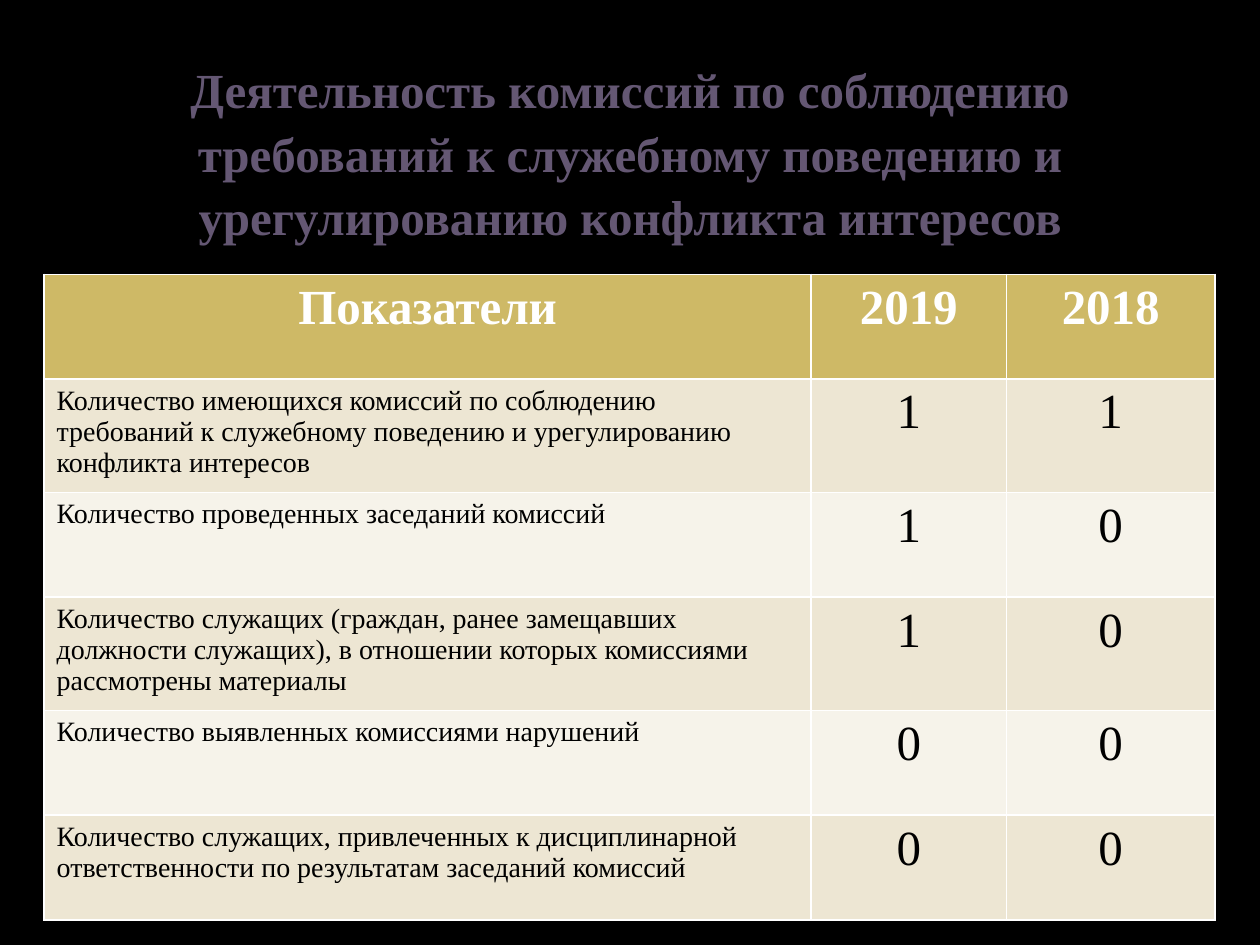
"""Build a slide with a table of commission activity for 2019 and 2018."""
from pptx import Presentation
from pptx.dml.color import RGBColor
from pptx.enum.text import MSO_ANCHOR, PP_ALIGN
from pptx.util import Cm, Pt

TITLE = ("Деятельность комиссий по соблюдению требований к служебному "
         "поведению и урегулированию конфликта интересов")
ROWS = [
    ("Показатели", "2019", "2018"),
    ("Количество имеющихся комиссий по соблюдению требований к служебному "
     "поведению и урегулированию конфликта интересов", "1", "1"),
    ("Количество проведенных заседаний комиссий", "1", "0"),
    ("Количество служащих (граждан, ранее замещавших должности служащих), "
     "в отношении которых комиссиями рассмотрены материалы", "1", "0"),
    ("Количество выявленных комиссиями нарушений", "0", "0"),
    ("Количество служащих, привлеченных к дисциплинарной ответственности "
     "по результатам заседаний комиссий", "0", "0"),
]
COLUMN_WIDTHS = (15.46, 3.94, 4.2)
ROW_HEIGHT = 2.11
FONT = "Times New Roman"
LARGE, SMALL = 28, 16
HEADER_FILL = "CEB966"
BAND_FILLS = ("F6F3EA", "EDE6D3")


def color(value):
    return RGBColor.from_string(value)


def write(frame, text, size, ink, bold, alignment):
    frame.text = text
    para = frame.paragraphs[0]
    para.alignment = alignment
    font = para.runs[0].font
    font.name, font.size, font.bold = FONT, Pt(size), bold
    font.color.rgb = color(ink)
    return para


def add_title(page):
    box = page.shapes.add_textbox(Cm(1.27), Cm(0.94), Cm(22.86), Cm(4.19))
    frame = box.text_frame
    frame.word_wrap = True
    frame.vertical_anchor = MSO_ANCHOR.MIDDLE
    para = write(frame, TITLE, LARGE, "645773", True, PP_ALIGN.CENTER)
    para.line_spacing = 1.08


def add_indicators(page):
    table = page.shapes.add_table(
        len(ROWS), len(COLUMN_WIDTHS), Cm(0.89), Cm(5.53),
        Cm(sum(COLUMN_WIDTHS)), Cm(ROW_HEIGHT * len(ROWS))).table
    for column, width in zip(table.columns, COLUMN_WIDTHS):
        column.width = Cm(width)
    for row_index, texts in enumerate(ROWS):
        table.rows[row_index].height = Cm(ROW_HEIGHT)
        header = row_index == 0
        for column_index, text in enumerate(texts):
            cell = table.cell(row_index, column_index)
            cell.fill.solid()
            cell.fill.fore_color.rgb = color(
                HEADER_FILL if header else BAND_FILLS[row_index % 2])
            label = column_index == 0 and not header
            write(cell.text_frame, text, SMALL if label else LARGE,
                  "FFFFFF" if header else "000000", header,
                  PP_ALIGN.LEFT if label else PP_ALIGN.CENTER)


def main():
    deck = Presentation()
    deck.slide_width, deck.slide_height = Cm(25.4), Cm(19.05)
    page = deck.slides.add_slide(deck.slide_layouts[6])
    page.background.fill.solid()
    page.background.fill.fore_color.rgb = color("000000")
    add_title(page)
    add_indicators(page)
    deck.save("out.pptx")


if __name__ == "__main__":
    main()
